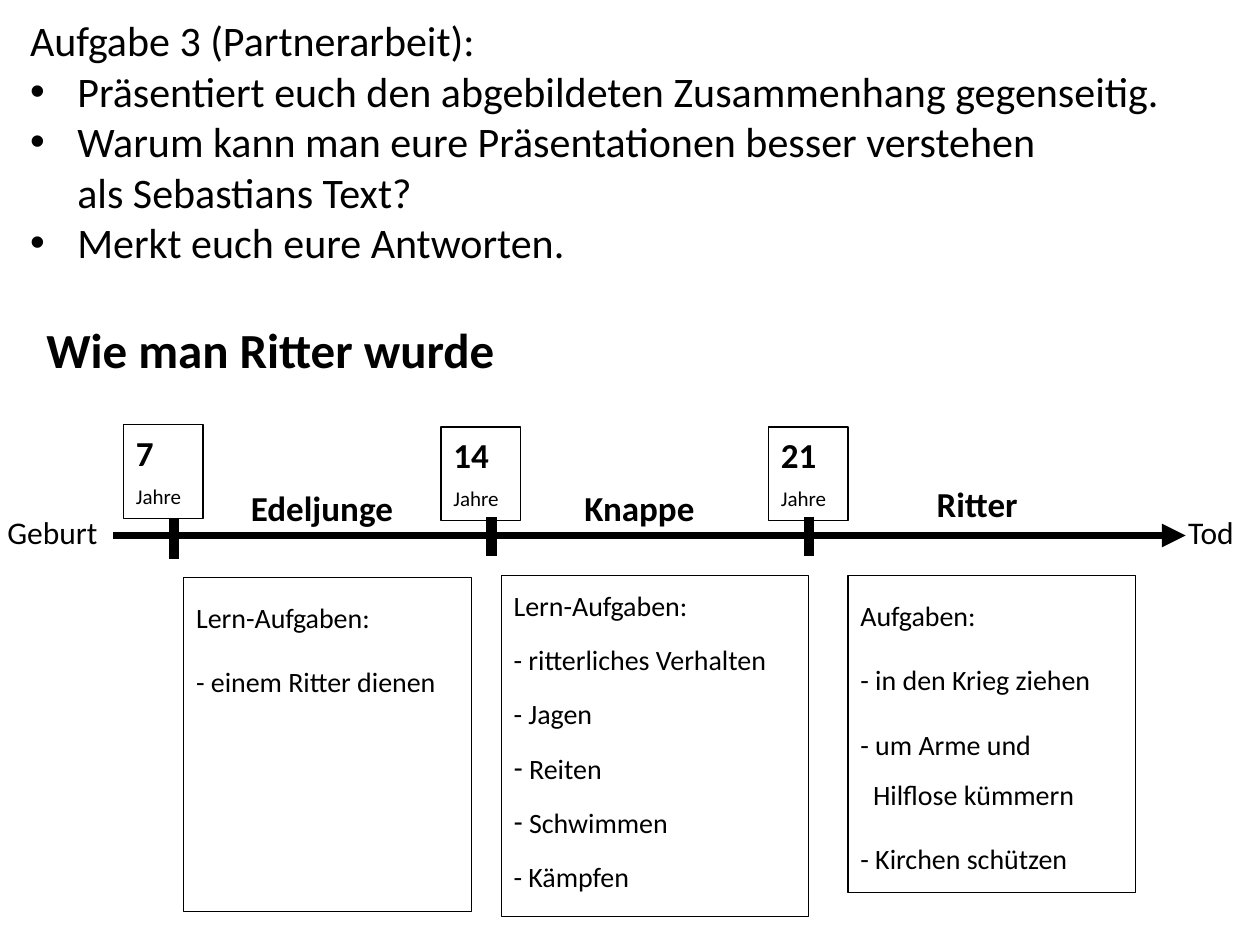
"""Build a slide with a partner task and a timeline of how one became a knight."""
from lxml.etree import SubElement
from pptx import Presentation
from pptx.dml.color import RGBColor
from pptx.enum.shapes import MSO_CONNECTOR, MSO_SHAPE
from pptx.enum.text import PP_ALIGN
from pptx.oxml.ns import qn
from pptx.util import Pt


def color(target, value):
    """Give a fill or font the solid colour of a hex string."""
    if hasattr(target, "solid"):
        target.solid()
        target = target.fore_color
    else:
        target = target.color
    target.rgb = RGBColor.from_string(value)


def write(box, lines, size, bold=False, spacing=1.0, align=PP_ALIGN.LEFT, gap=0.5):
    """Fill a box with lines given as text or as a dict of text and overrides."""
    frame = box.text_frame
    frame.word_wrap = True
    for index, line in enumerate(lines):
        entry = line if isinstance(line, dict) else {"text": line}
        para = frame.paragraphs[0] if index == 0 else frame.add_paragraph()
        font_size = entry.get("size", size)
        layout = {
            "alignment": align,
            "line_spacing": spacing,
            "space_before": Pt(gap * font_size if index else 0),
        }
        for name, value in layout.items():
            setattr(para, name, value)
        indent = Pt(entry.get("indent", 0))
        if indent or "bullet" in entry:
            properties = para._p.get_or_add_pPr()
            properties.set("marL", str(indent))
            properties.set("indent", str(-indent))
        if "bullet" in entry:
            SubElement(properties, qn("a:buFont"), typeface="Arial")
            SubElement(properties, qn("a:buChar"), char=entry["bullet"])
        for part_index, part in enumerate(entry["text"].split("\n")):
            if part_index:
                para.add_line_break()
            span = para.add_run()
            span.text = part
            style = {"name": "Calibri", "size": Pt(font_size), "bold": entry.get("bold", bold)}
            for name, value in style.items():
                setattr(span.font, name, value)
            color(span.font, "000000")


deck = Presentation()
deck.slide_width, deck.slide_height = Pt(720), Pt(540)
page = deck.slides.add_slide(deck.slide_layouts[6])

lines = [
    (64.8, 306, 677.5, 306, 4.5),
    (99.4, 296.6, 99.4, 319.7, 6),
    (280.8, 295.2, 280.8, 317.5, 6),
    (462.2, 295.2, 462.2, 317.5, 6),
]
for index, (*ends, width) in enumerate(lines):
    connector = page.shapes.add_connector(MSO_CONNECTOR.STRAIGHT, *map(Pt, ends))
    connector.line.width = Pt(width)
    color(connector.line.fill, "000000")
    if index == 0:
        SubElement(connector.line._get_or_add_ln(), qn("a:tailEnd"), type="triangle")
    SubElement(connector._element.spPr, qn("a:effectLst"))

ages = [
    ((70.6, 242.8, 45.4, 53.4), "7"),
    ((252, 244, 45.4, 53.4), "14"),
    ((439.2, 244, 45.4, 53.4), "21"),
]
frames = [
    (place, [age, {"text": "Jahre", "size": 12, "bold": False}], {"size": 20, "bold": True})
    for place, age in ages
]
frames += [
    ((105, 330, 164.4, 190.8), ["Lern-Aufgaben:", "- einem Ritter dienen"],
     {"size": 16, "spacing": 1.5}),
    ((286.4, 328.8, 175.6, 195.1),
     ["Lern-Aufgaben:", "- ritterliches Verhalten", "- Jagen",
      {"text": " Reiten", "bullet": "-"}, {"text": " Schwimmen", "bullet": "-"}, "- Kämpfen"],
     {"size": 16, "spacing": 1.2}),
    ((484.6, 328.8, 164.4, 181.4),
     ["Aufgaben:", "- in den Krieg ziehen",
      {"text": "- um Arme und\nHilflose kümmern", "indent": 7.2}, "- Kirchen schützen"],
     {"size": 16, "spacing": 1.5}),
]
for place, texts, style in frames:
    box = page.shapes.add_shape(MSO_SHAPE.RECTANGLE, *map(Pt, place))
    box.shadow.inherit = False
    box.fill.background()
    box.line.width = Pt(0.75)
    color(box.line.fill, "000000")
    box.text_frame.vertical_anchor = 1
    write(box, texts, **style)

tasks = [
    "Präsentiert euch den abgebildeten Zusammenhang gegenseitig.",
    "Warum kann man eure Präsentationen besser verstehen\nals Sebastians Text?",
    "Merkt euch eure Antworten.",
]
stage = {"size": 20, "bold": True, "align": PP_ALIGN.CENTER}
labels = [
    ((19.4, 179.3, 436.3, 58.3), ["Wie man Ritter wurde"], {"size": 28, "bold": True}),
    ((121.7, 274.3, 124.6, 31.7), ["Edeljunge"], stage),
    ((303.1, 274.3, 124.6, 31.7), ["Knappe"], stage),
    ((496.1, 272.2, 124.6, 31.7), ["Ritter"], stage),
    ((-2.9, 289.4, 79.2, 28.8), ["Geburt"], {"size": 18}),
    ((671.8, 289.4, 70.6, 28.8), ["Tod"], {"size": 18}),
    ((10.1, 5, 699.1, 152.6),
     ["Aufgabe 3 (Partnerarbeit):"] + [{"text": task, "bullet": "•", "indent": 27} for task in tasks],
     {"size": 24, "gap": 0}),
]
for place, texts, style in labels:
    write(page.shapes.add_textbox(*map(Pt, place)), texts, **style)

deck.save("out.pptx")
